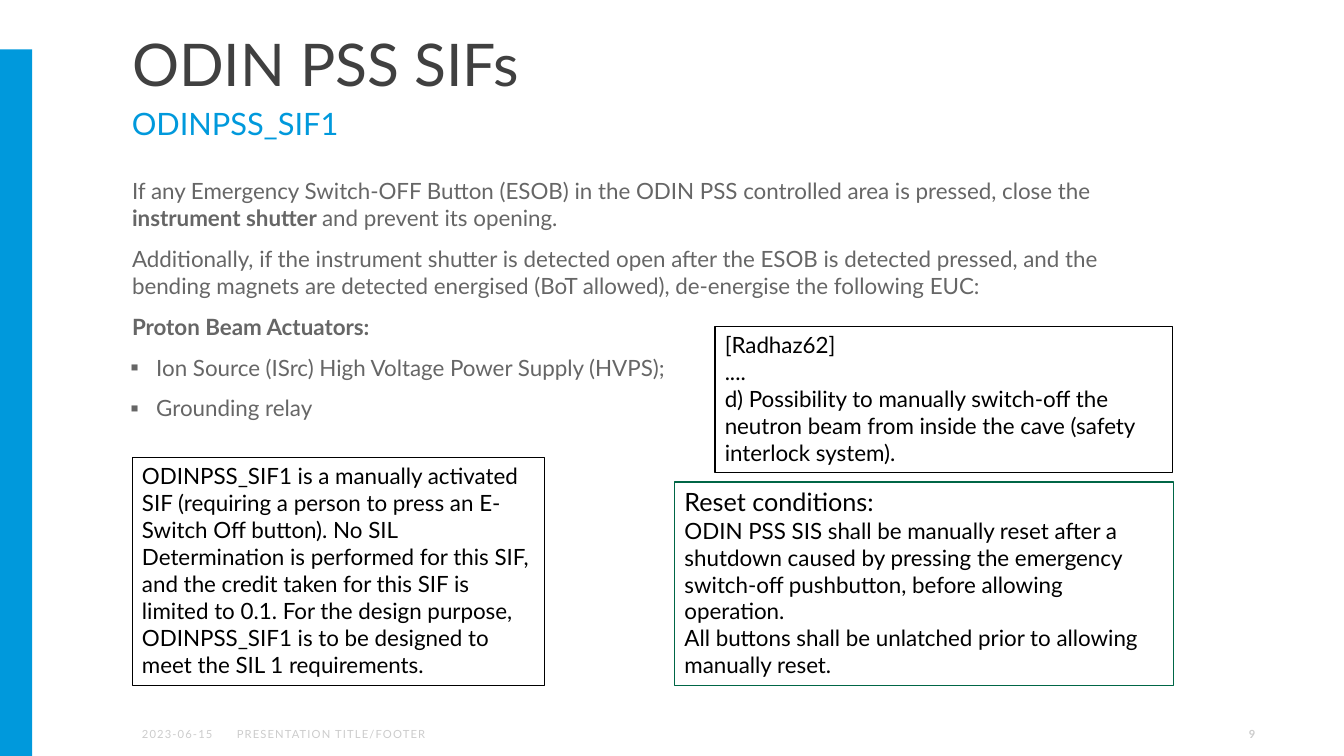
"""Build the ODIN PSS SIF1 slide."""
from lxml.etree import SubElement
from pptx import Presentation
from pptx.dml.color import RGBColor
from pptx.enum.shapes import MSO_SHAPE
from pptx.enum.text import MSO_ANCHOR, MSO_AUTO_SIZE, PP_ALIGN
from pptx.oxml.ns import qn
from pptx.util import Inches, Pt

COLORS = {"blue": "0099DC", "title": "404040", "body": "666666", "footer": "CCCCCC",
          "green": "006646", "black": "000000", "white": "FFFFFF"}


def add_run(p, text, size, color, bold=False):
    r = p.add_run()
    r.text = text
    r.font.name = "Lato"
    r.font.size = Pt(size)
    r.font.bold = bold
    r.font.color.rgb = RGBColor.from_string(COLORS[color])
    return r


def set_frame(sp, anchor=MSO_ANCHOR.TOP, insets=(0.1, 0.05, 0.1, 0.05)):
    tf = sp.text_frame
    tf.word_wrap = True
    tf.auto_size = MSO_AUTO_SIZE.NONE
    tf.vertical_anchor = anchor
    tf.margin_left, tf.margin_top, tf.margin_right, tf.margin_bottom = map(Inches, insets)
    return tf


prs = Presentation()
prs.slide_width, prs.slide_height = Inches(13.33), Inches(7.5)
s = prs.slides.add_slide(prs.slide_layouts[5])

bar = s.shapes.add_shape(MSO_SHAPE.RECTANGLE, 0, Inches(0.49), Inches(0.32), Inches(7.01))
bar.shadow.inherit = False
bar.fill.solid()
bar.fill.fore_color.rgb = RGBColor.from_string(COLORS["blue"])
bar.line.fill.background()

title = s.shapes.title
title.left, title.top, title.width, title.height = map(Inches, (1.21, 0.29, 10.24, 0.72))
p = set_frame(title, MSO_ANCHOR.MIDDLE, (0.1, 0.05, 0.1, 0.02)).paragraphs[0]
p.alignment = PP_ALIGN.LEFT
p.line_spacing = 0.9
add_run(p, "ODIN PSS SIFs", 42, "title")

subtitle = s.shapes.add_textbox(*map(Inches, (1.21, 1.02, 10.24, 0.55)))
tf = set_frame(subtitle, insets=(0.1, 0.02, 0.1, 0.05))
add_run(tf.paragraphs[0], "ODINPSS_SIF1", 22, "blue")

body_paragraphs = [
    (False, [("If any Emergency Switch-OFF Button (ESOB) in the ODIN PSS controlled area "
              "is pressed, close the ", False),
             ("instrument shutter ", True), ("and prevent its opening.", False)]),
    (False, [("Additionally, if the instrument shutter is detected open after the ESOB is "
              "detected pressed, and the bending magnets are detected energised (BoT allowed), "
              "de-energise the following EUC:", False)]),
    (False, [("Proton Beam Actuators:", True)]),
    (True, [("Ion Source (ISrc) High Voltage Power Supply (HVPS);", False)]),
    (True, [("Grounding relay", False)]),
]
body = s.shapes.add_textbox(*map(Inches, (1.2, 1.71, 10.24, 5.21)))
tf = set_frame(body, insets=(0, 0.05, 0.02, 0.05))
for i, (bulleted, runs) in enumerate(body_paragraphs):
    p = tf.paragraphs[0] if i == 0 else tf.add_paragraph()
    if i:
        p.space_before = Pt(10)
    pPr = p._p.get_or_add_pPr()
    pPr.set("marL", str(Inches(0.35 if bulleted else 0.11)))
    pPr.set("indent", str(Inches(-0.26 if bulleted else 0)))
    if bulleted:
        p.level = 1
        SubElement(pPr, qn("a:buFont")).set("typeface", "Lato")
        SubElement(pPr, qn("a:buChar")).set("char", "▪")
    for text, bold in runs:
        add_run(p, text, 16, "body", bold)

boxes = [
    ((6.69, 4.78, 4.95, 2.02), "green", 1, "white", [
        ("Reset conditions:", 18),
        ("ODIN PSS SIS shall be manually reset after a shutdown caused by pressing the "
         "emergency switch-off pushbutton, before allowing operation.", 16),
        ("All buttons shall be unlatched prior to allowing manually reset.", 16)]),
    ((7.09, 3.24, 4.54, 1.45), "black", 1, "white", [
        ("[Radhaz62]", 16),
        ("....", 16),
        ("d) Possibility to manually switch-off the neutron beam from inside the cave "
         "(safety interlock system).", 16)]),
    ((1.31, 4.54, 4.09, 2.26), "black", 0.75, None, [
        ("ODINPSS_SIF1 is a manually activated SIF (requiring a person to press an E-Switch "
         "Off button). No SIL Determination is performed for this SIF, and the credit taken "
         "for this SIF is limited to 0.1. For the design purpose, ODINPSS_SIF1 is to be "
         "designed to meet the SIL 1 requirements.", 16)]),
]
for place, line, width, fill, paragraphs in boxes:
    sp = s.shapes.add_shape(MSO_SHAPE.RECTANGLE, *map(Inches, place))
    sp.shadow.inherit = False
    if fill:
        sp.fill.solid()
        sp.fill.fore_color.rgb = RGBColor.from_string(COLORS[fill])
    else:
        sp.fill.background()
    sp.line.color.rgb = RGBColor.from_string(COLORS[line])
    sp.line.width = Pt(width)
    tf = set_frame(sp)
    for i, (text, size) in enumerate(paragraphs):
        p = tf.paragraphs[0] if i == 0 else tf.add_paragraph()
        p.alignment = PP_ALIGN.LEFT
        add_run(p, text, size, "black")

footers = [
    (1.31, 0.91, "2023-06-15", PP_ALIGN.LEFT, False),
    (2.25, 4.72, "PRESENTATION TITLE/FOOTER", PP_ALIGN.LEFT, False),
    (9.55, 3, "9", PP_ALIGN.RIGHT, True),
]
for left, width, text, align, bold in footers:
    sp = s.shapes.add_textbox(Inches(left), Inches(7.08), Inches(width), Inches(0.4))
    p = set_frame(sp, MSO_ANCHOR.MIDDLE).paragraphs[0]
    p.alignment = align
    r = add_run(p, text, 8, "footer", bold)
    if not bold:
        r._r.get_or_add_rPr().set("spc", "80")

prs.save("out.pptx")
